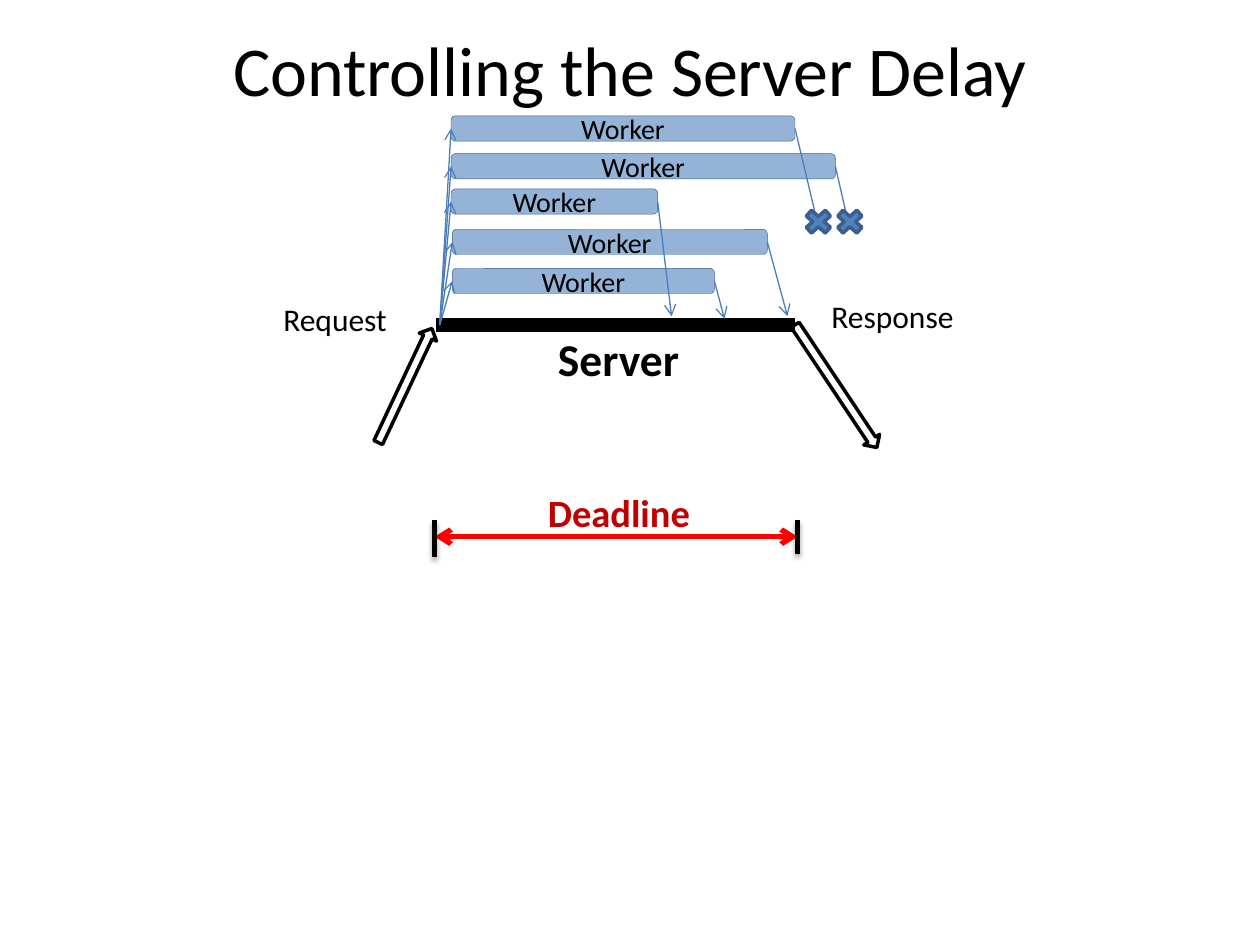
from dataclasses import dataclass

from lxml import etree
from pptx import Presentation
from pptx.dml.color import RGBColor
from pptx.enum import shapes, text
from pptx.oxml import ns
from pptx.util import Inches, Pt


@dataclass(frozen=True)
class Theme:
    font: str = "Calibri"
    black: str = "000000"
    bar: str = "95B3D7"
    bar_edge: str = "3A5F8C"
    cross: str = "4F81BD"
    flow: str = "4B7EBC"
    deadline: str = "FF0000"
    deadline_text: str = "C00000"
    title_size: int = 40
    server_size: int = 26
    deadline_size: int = 22
    label_size: int = 18
    worker_size: int = 16


THEME = Theme()
BAR_HEIGHT = 0.2
FAN_OUT = (3.49, 2.58)

# left, top, width of the bar, then the end of its reply arrow
WORKERS = [
    (3.58, 0.92, 2.73, (6.5, 1.82)),
    (3.58, 1.22, 3.05, (6.74, 1.8)),
    (3.58, 1.5, 1.64, (5.33, 2.51)),
    (3.59, 1.82, 2.5, (6.25, 2.51)),
    (3.59, 2.13, 2.08, (5.75, 2.53)),
]


def color(value):
    return RGBColor.from_string(value)


def add_run(paragraph, words, size, ink=THEME.black, bold=False):
    run = paragraph.add_run()
    run.text = words
    run.font.name = THEME.font
    run.font.size = Pt(size)
    run.font.bold = bold
    run.font.color.rgb = color(ink)


def set_title(slide, words):
    title = slide.shapes.title
    title.left, title.top = Inches(0.5), Inches(0.17)
    title.width, title.height = Inches(9), Inches(0.75)
    title.text_frame.vertical_anchor = text.MSO_ANCHOR.MIDDLE
    paragraph = title.text_frame.paragraphs[0]
    paragraph.alignment = text.PP_ALIGN.CENTER
    add_run(paragraph, words, THEME.title_size)


def add_label(slide, box, words, size, ink=THEME.black, bold=False):
    label = slide.shapes.add_textbox(*map(Inches, box))
    label.text_frame.word_wrap = False
    label.text_frame.auto_size = text.MSO_AUTO_SIZE.SHAPE_TO_FIT_TEXT
    add_run(label.text_frame.paragraphs[0], words, size, ink, bold)


def add_preset(slide, kind, box, edge, width, fill=None, rotation=0):
    shape = slide.shapes.add_shape(kind, *map(Inches, box))
    shape.shadow.inherit = False
    shape.rotation = rotation
    shape.line.color.rgb = color(edge)
    shape.line.width = Pt(width)
    if fill:
        shape.fill.solid()
        shape.fill.fore_color.rgb = color(fill)
    else:
        shape.fill.background()
    return shape


def add_line(slide, start, end, ink, width, arrows=(), shadow=False):
    """Draw a straight line; arrows names the ends to tip: headEnd, tailEnd."""
    line = slide.shapes.add_connector(
        shapes.MSO_CONNECTOR.STRAIGHT, *map(Inches, (*start, *end)))
    line.line.color.rgb = color(ink)
    line.line.width = Pt(width)
    properties = line.element.spPr
    outline = line.line._get_or_add_ln()
    for tip in arrows:
        etree.SubElement(outline, ns.qn(f"a:{tip}"), type="arrow")
    effects = etree.SubElement(properties, ns.qn("a:effectLst"))
    if shadow:
        outer = etree.SubElement(
            effects, ns.qn("a:outerShdw"), blurRad=str(Pt(3.1)),
            dist=str(Pt(1.8)), dir="5400000", rotWithShape="0")
        ink_element = etree.SubElement(outer, ns.qn("a:srgbClr"), val=THEME.black)
        etree.SubElement(ink_element, ns.qn("a:alpha"), val="35000")


def add_flow(slide, start, end):
    add_line(slide, start, end, THEME.flow, 0.75, ["tailEnd"])


def add_worker(slide, left, top, width):
    bar = add_preset(slide, shapes.MSO_SHAPE.ROUNDED_RECTANGLE,
                     (left, top, width, BAR_HEIGHT),
                     THEME.bar_edge, 0.25, THEME.bar)
    bar.text_frame.vertical_anchor = text.MSO_ANCHOR.MIDDLE
    paragraph = bar.text_frame.paragraphs[0]
    paragraph.alignment = text.PP_ALIGN.CENTER
    add_run(paragraph, "Worker", THEME.worker_size)


def add_workers(slide):
    for left, top, width, _ in WORKERS:
        add_worker(slide, left, top, width)
    for left, top, width, reply in WORKERS:
        middle = top + BAR_HEIGHT / 2
        add_flow(slide, FAN_OUT, (left, middle))
        add_flow(slide, (left + width, middle), reply)
    for left in (6.35, 6.6):
        add_preset(slide, shapes.MSO_SHAPE.MATH_MULTIPLY,
                   (left, 1.63, 0.29, 0.26), THEME.bar_edge, 2, THEME.cross)


def add_server(slide):
    add_line(slide, (3.46, 2.58), (6.31, 2.58), THEME.black, 8)
    add_label(slide, (4.33, 2.58, 1.22, 0.54), "Server",
              THEME.server_size, bold=True)
    add_label(slide, (2.15, 2.33, 1.05, 0.4), "Request", THEME.label_size)
    add_label(slide, (6.5, 2.31, 1.2, 0.4), "Response", THEME.label_size)
    for box, rotation in (((3.14, 2.56, 0.15, 1), 25.2),
                          ((6.56, 2.48, 0.15, 1.17), 146.3)):
        add_preset(slide, shapes.MSO_SHAPE.UP_ARROW, box, THEME.black, 2,
                   rotation=rotation)


def add_deadline(slide):
    left, right, middle = 3.45, 6.33, 4.26
    add_line(slide, (left, middle), (right, middle), THEME.deadline, 3,
             ["headEnd", "tailEnd"])
    for x, bottom in ((left, 4.42), (right, 4.4)):
        add_line(slide, (x, 4.13), (x, bottom), THEME.black, 3, shadow=True)
    add_label(slide, (4.25, 3.83, 1.39, 0.47), "Deadline",
              THEME.deadline_size, THEME.deadline_text, bold=True)


def main():
    presentation = Presentation()
    presentation.slide_width = Inches(10)
    presentation.slide_height = Inches(7.5)
    slide = presentation.slides.add_slide(presentation.slide_layouts[5])
    set_title(slide, "Controlling the Server Delay")
    add_server(slide)
    add_deadline(slide)
    add_workers(slide)
    presentation.save("out.pptx")


if __name__ == "__main__":
    main()
